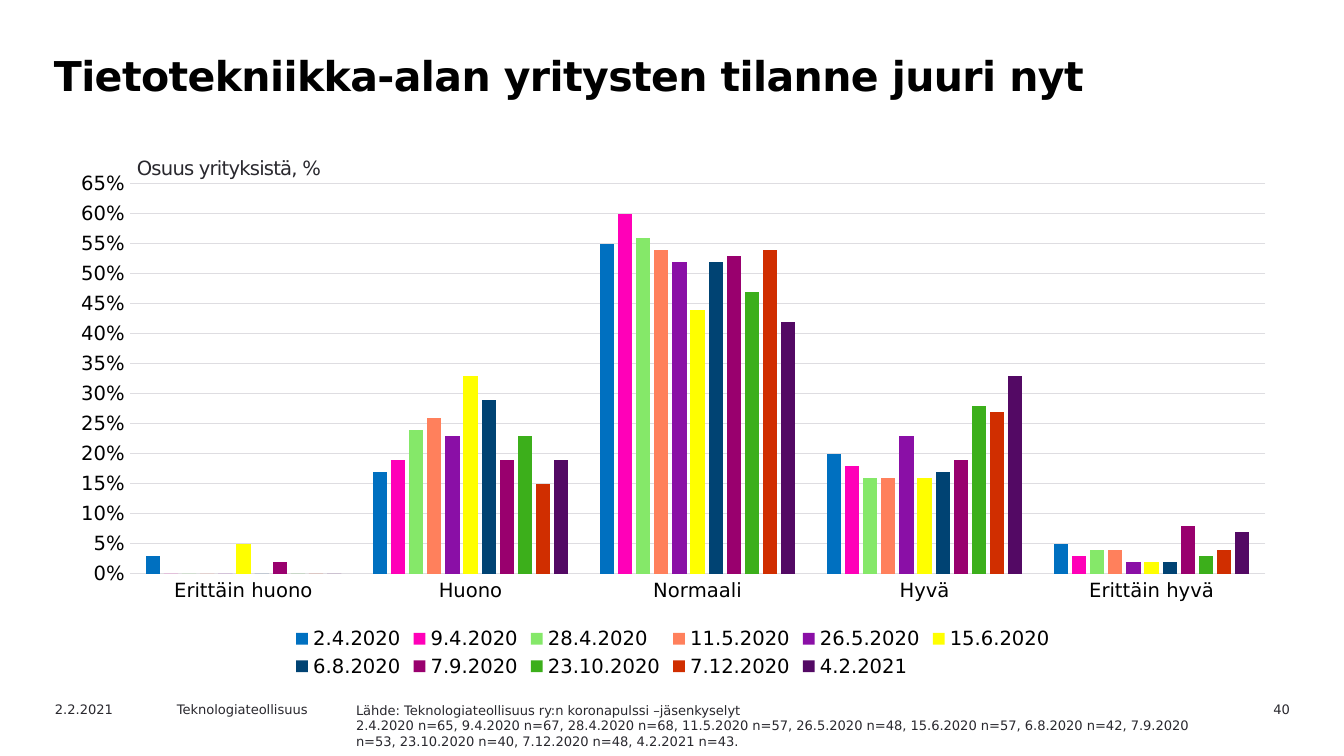
"""Build a slide with a clustered column chart of how IT companies are doing."""
import pptx
import pptx.chart.data
import pptx.dml.color
import pptx.enum.chart
import pptx.enum.text
import pptx.oxml
import pptx.oxml.ns
import pptx.util

RGB = pptx.dml.color.RGBColor
Pt = pptx.util.Pt
ALIGN = pptx.enum.text.PP_ALIGN
BLACK = RGB(0x00, 0x00, 0x00)
INK = RGB(0x29, 0x28, 0x2E)
GRID = RGB(0xDE, 0xDD, 0xE1)
FONT = "DejaVu Sans"
PX = 914400 / 134.4


def emu(*vals):
    return [round(val * PX) for val in vals]


def write(shape, box, text, size=7, color=INK, bold=False, align=ALIGN.LEFT,
          inset=(13, 7), track=0, line=None):
    shape.left, shape.top, shape.width, shape.height = emu(*box)
    frame = shape.text_frame
    frame.word_wrap = True
    frame.auto_size = pptx.enum.text.MSO_AUTO_SIZE.NONE
    frame.vertical_anchor = pptx.enum.text.MSO_ANCHOR.TOP
    frame.margin_left = frame.margin_right = emu(inset[0])[0]
    frame.margin_top = frame.margin_bottom = emu(inset[1])[0]
    frame.text = text
    for par in frame.paragraphs:
        props = par._p.get_or_add_pPr()
        props.set("marL", "0")
        props.set("indent", "0")
        props.append(pptx.oxml.parse_xml(f'<a:buNone {pptx.oxml.ns.nsdecls("a")}/>'))
        par.alignment = align
        par.space_before = Pt(0)
        par.line_spacing = line
        for run in par.runs:
            run.font.name = FONT
            run.font.size = Pt(size)
            run.font.bold = bold
            run.font.color.rgb = color
            if track:
                run._r.get_or_add_rPr().set("spc", str(track))


deck = pptx.Presentation()
deck.slide_width, deck.slide_height = emu(1344, 756)
slide = deck.slides.add_slide(deck.slide_layouts[1])
title, source = slide.placeholders

write(title, (38, 42, 1175, 95), "Tietotekniikka-alan yritysten tilanne juuri nyt",
      size=22, color=BLACK, bold=True, inset=(16, 7), track=-30, line=Pt(27))

cats = ["Erittäin huono", "Huono", "Normaali", "Hyvä", "Erittäin hyvä"]
series = [
    ("2.4.2020", RGB(0x00, 0x70, 0xC0), (0.03, 0.17, 0.55, 0.2, 0.05)),
    ("9.4.2020", RGB(0xFF, 0x00, 0xB8), (0, 0.19, 0.6, 0.18, 0.03)),
    ("28.4.2020", RGB(0x85, 0xE8, 0x69), (0, 0.24, 0.56, 0.16, 0.04)),
    ("11.5.2020", RGB(0xFF, 0x80, 0x5C), (0, 0.26, 0.54, 0.16, 0.04)),
    ("26.5.2020", RGB(0x8A, 0x0F, 0xA6), (0, 0.23, 0.52, 0.23, 0.02)),
    ("15.6.2020", RGB(0xFF, 0xFF, 0x00), (0.05, 0.33, 0.44, 0.16, 0.02)),
    ("6.8.2020", RGB(0x00, 0x43, 0x73), (0, 0.29, 0.52, 0.17, 0.02)),
    ("7.9.2020", RGB(0x99, 0x00, 0x6E), (0.02, 0.19, 0.53, 0.19, 0.08)),
    ("23.10.2020", RGB(0x3C, 0xAF, 0x1B), (0, 0.23, 0.47, 0.28, 0.03)),
    ("7.12.2020", RGB(0xD0, 0x2E, 0x00), (0, 0.15, 0.54, 0.27, 0.04)),
    ("4.2.2021", RGB(0x53, 0x09, 0x64), (0, 0.19, 0.42, 0.33, 0.07)),
]
data = pptx.chart.data.CategoryChartData(number_format="0%")
data.categories = cats
for name, color, vals in series:
    data.add_series(name, vals)
kind = pptx.enum.chart.XL_CHART_TYPE.COLUMN_CLUSTERED
chart = slide.shapes.add_chart(kind, *emu(56, 163, 1234, 520), data).chart
chart.has_title = False
chart.font.name = FONT
chart.font.size = Pt(10)
chart.font.color.rgb = INK
chart.has_legend = True
chart.legend.position = pptx.enum.chart.XL_LEGEND_POSITION.BOTTOM
chart.legend.include_in_layout = False

plot = chart.plots[0]
plot.gap_width = 219
plot.overlap = -27
plot.vary_by_categories = False
for bars, (name, color, vals) in zip(plot.series, series):
    bars.format.fill.solid()
    bars.format.fill.fore_color.rgb = color
    bars.invert_if_negative = False

base, scale = chart.category_axis, chart.value_axis
for axis in (base, scale):
    axis.major_tick_mark = axis.minor_tick_mark = pptx.enum.chart.XL_TICK_MARK.NONE
for part in (base.tick_labels, scale.tick_labels, chart.legend):
    part.font.name = FONT
    part.font.size = Pt(10.5)
    part.font.color.rgb = BLACK
scale.minimum_scale = 0
scale.maximum_scale = 0.65
scale.major_unit = 0.05
scale.tick_labels.number_format = "0%"
scale.tick_labels.number_format_is_linked = False
scale.format.line.fill.background()
for line in (base.format.line, scale.major_gridlines.format.line):
    line.color.rgb = GRID
    line.width = Pt(0.75)

area = chart._chartSpace.chart.plotArea
for old in area.findall(pptx.oxml.ns.qn("c:layout")):
    area.remove(old)
area.insert(0, pptx.oxml.parse_xml(
    f'<c:layout {pptx.oxml.ns.nsdecls("c")}><c:manualLayout>'
    '<c:layoutTarget val="inner"/><c:xMode val="edge"/><c:yMode val="edge"/>'
    '<c:x val="0.06"/><c:y val="0.04"/><c:w val="0.92"/><c:h val="0.75"/>'
    '</c:manualLayout></c:layout>'))

write(source, (343, 695, 879, 54),
      "Lähde: Teknologiateollisuus ry:n koronapulssi –jäsenkyselyt\n"
      "2.4.2020 n=65, 9.4.2020 n=67, 28.4.2020 n=68, 11.5.2020 n=57, "
      "26.5.2020 n=48, 15.6.2020 n=57, 6.8.2020 n=42, 7.9.2020 n=53, "
      "23.10.2020 n=40, 7.12.2020 n=48, 4.2.2021 n=43.")

notes = [
    ((42, 695, 134, 24), "2.2.2021", {}),
    ((164, 695, 191, 24), "Teknologiateollisuus", {}),
    ((1177, 695, 126, 24), "40", {"align": ALIGN.RIGHT}),
    ((132, 151, 456, 35), "Osuus yrityksistä, %",
     {"size": 10.5, "inset": (5, 5), "track": -40}),
]
for box, text, form in notes:
    write(slide.shapes.add_textbox(0, 0, 0, 0), box, text, **form)

deck.save("out.pptx")
